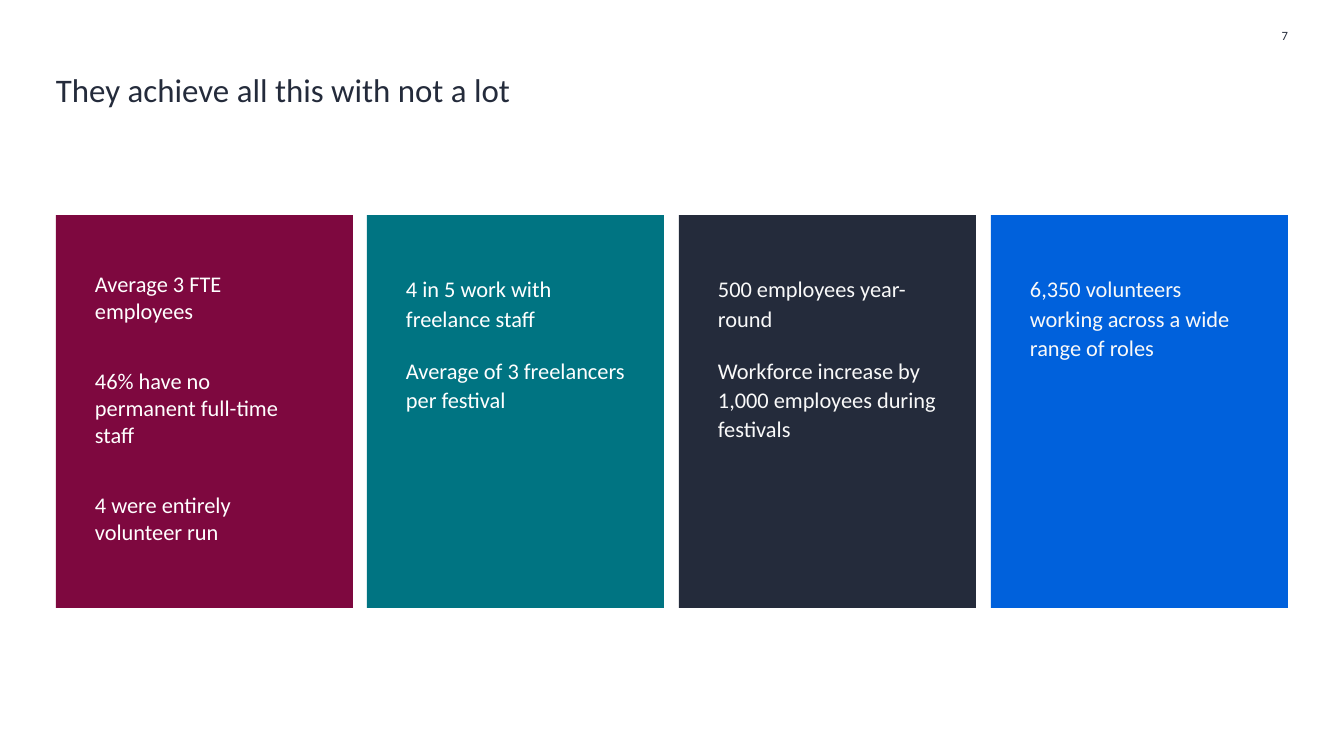
import dataclasses

import pptx
import pptx.dml.color
import pptx.enum.shapes
import pptx.enum.text
import pptx.util

PX = 914400 / 100.8
LEFT, RIGHT = 56, 1288
CARD_TOP, CARD_WIDTH, CARD_HEIGHT = 215, 297, 393


@dataclasses.dataclass(frozen=True)
class Theme:
    font: str = "Calibri"
    ink: str = "242B3B"
    white: str = "FFFFFF"
    off_white: str = "F9F9F9"
    burgundy: str = "7E083F"
    teal: str = "007482"
    blue: str = "0061DC"
    title_size: float = 23.5
    body_size: float = 16
    number_size: float = 9


def px(length):
    return pptx.util.Emu(round(length * PX))


class SlideBuilder:
    """Draws styled elements on one slide."""

    def __init__(self, slide, theme):
        self.slide = slide
        self.theme = theme

    def set_text(self, shape, paragraphs, size, color, insets=(0, 0, 0, 0)):
        frame = shape.text_frame
        frame.word_wrap = True
        frame.margin_left, frame.margin_top, frame.margin_right, frame.margin_bottom = map(px, insets)
        frame.text = "\n".join(paragraphs)
        for paragraph in frame.paragraphs:
            paragraph.alignment = pptx.enum.text.PP_ALIGN.LEFT
            for run in paragraph.runs:
                run.font.name = self.theme.font
                run.font.size = pptx.util.Pt(size)
                run.font.color.rgb = pptx.dml.color.RGBColor.from_string(color)
        return frame

    def text(self, left, top, width, height, text, size):
        box = self.slide.shapes.add_textbox(px(left), px(top), px(width), px(height))
        return self.set_text(box, [text], size, self.theme.ink)

    def card(self, left, fill, color, paragraphs, text_top, space_after, line_spacing):
        card = self.slide.shapes.add_shape(
            pptx.enum.shapes.MSO_SHAPE.RECTANGLE,
            px(left), px(CARD_TOP), px(CARD_WIDTH), px(CARD_HEIGHT))
        card.shadow.inherit = False
        card.fill.solid()
        card.fill.fore_color.rgb = pptx.dml.color.RGBColor.from_string(fill)
        card.line.fill.background()
        frame = self.set_text(card, paragraphs, self.theme.body_size, color, (39, text_top, 39, 40))
        frame.vertical_anchor = pptx.enum.text.MSO_ANCHOR.TOP
        for index, paragraph in enumerate(frame.paragraphs):
            paragraph.space_before = pptx.util.Pt(16 if index else 0)
            paragraph.space_after = pptx.util.Pt(space_after)
            paragraph.line_spacing = line_spacing


def main():
    presentation = pptx.Presentation()
    presentation.slide_width, presentation.slide_height = px(1344), px(756)
    theme = Theme()
    builder = SlideBuilder(presentation.slides.add_slide(presentation.slide_layouts[6]), theme)

    builder.text(LEFT, 70, RIGHT - LEFT, 40, "They achieve all this with not a lot", theme.title_size)
    number = builder.text(RIGHT - 53, 28, 53, 15, "7", theme.number_size)
    number.vertical_anchor = pptx.enum.text.MSO_ANCHOR.MIDDLE
    number.paragraphs[0].alignment = pptx.enum.text.PP_ALIGN.RIGHT

    loose = (55, 15, 1.0)
    fixed = (58, 0, pptx.util.Pt(21))
    cards = [
        (theme.burgundy, theme.white, loose,
         ["Average 3 FTE employees", "46% have no permanent full-time staff",
          "4 were entirely volunteer run"]),
        (theme.teal, theme.white, fixed,
         ["4 in 5 work with freelance staff", "Average of 3 freelancers per festival"]),
        (theme.ink, theme.off_white, fixed,
         ["500 employees year-round", "Workforce increase by 1,000 employees during festivals"]),
        (theme.blue, theme.off_white, fixed,
         ["6,350 volunteers working across a wide range of roles"]),
    ]
    for index, (fill, color, spacing, paragraphs) in enumerate(cards):
        left = LEFT + index * (RIGHT - LEFT - CARD_WIDTH) // (len(cards) - 1)
        builder.card(left, fill, color, paragraphs, *spacing)

    presentation.save("out.pptx")


if __name__ == "__main__":
    main()
